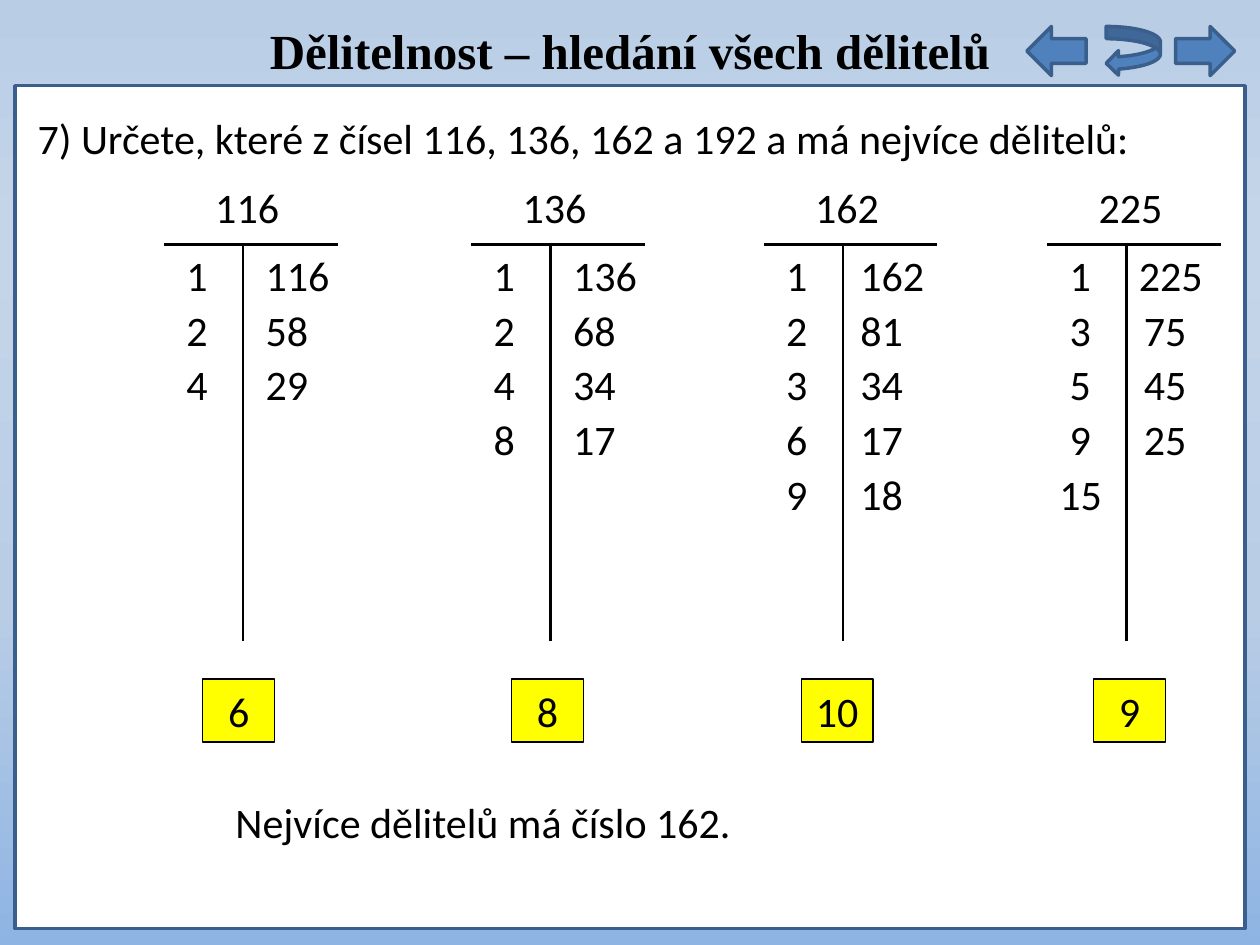
from lxml import etree
from pptx import Presentation
from pptx.dml.color import RGBColor
from pptx.enum.shapes import MSO_CONNECTOR, MSO_SHAPE as SHAPE
from pptx.enum.text import MSO_ANCHOR as ANCHOR, PP_ALIGN as ALIGN
from pptx.oxml.ns import qn
from pptx.util import Inches, Pt

# Content
TITLE = "Dělitelnost – hledání všech dělitelů"
QUESTION = "7) Určete, které z čísel 116, 136, 162 a 192 a má nejvíce dělitelů:"
ANSWER = "Nejvíce dělitelů má číslo 162."
# left edge, gap from stem to first and to later right-hand numbers, left of count box
COLUMNS = [
    dict(number="116", left=1.30, gaps=(0.08, 0.08), count="6", count_left=1.61,
         pairs=[("1", "116"), ("2", "58"), ("4", "29")]),
    dict(number="136", left=3.74, gaps=(0.08, 0.08), count="8", count_left=4.06,
         pairs=[("1", "136"), ("2", "68"), ("4", "34"), ("8", "17")]),
    dict(number="162", left=6.06, gaps=(0.04, 0.04), count="10", count_left=6.36,
         pairs=[("1", "162"), ("2", "81"), ("3", "34"), ("6", "17"), ("9", "18")]),
    dict(number="225", left=8.31, gaps=(0, 0.04), count="9", count_left=8.68,
         pairs=[("1", "225"), ("3", "75"), ("5", "45"), ("9", "25"), ("15", "")]),
]
ARROWS = [
    (SHAPE.RIGHT_ARROW, 9.33, 0.47),
    (SHAPE.LEFT_ARROW, 8.15, 0.47),
    (SHAPE.CURVED_LEFT_ARROW, 8.78, 0.43),
]
GRADIENT = [(0, "B9CDE5"), (25, "C5D5E9"), (64, "B9CDE5"), (100, "8EB4E3")]
BLACK, WHITE, YELLOW, BLUE, NAVY = "000000", "FFFFFF", "FFFF00", "4F81BD", "3A5F8C"

# Layout
TOP, BOTTOM, STEP = 1.94, 5.09, 0.435
TABLE_WIDTH, STEM = 1.38, 0.63
CELL_WIDTH, CELL_HEIGHT = 0.79, 0.5

deck = Presentation()
deck.slide_width, deck.slide_height = Inches(10), Inches(7.5)
page = deck.slides.add_slide(deck.slide_layouts[6])


def color(value):
    return RGBColor.from_string(value)


def write(box, text, size=24, font="Calibri", bold=False, align=ALIGN.LEFT,
          anchor=ANCHOR.TOP):
    frame = box.text_frame
    frame.word_wrap = True
    frame.vertical_anchor = anchor
    para = frame.paragraphs[0]
    para.alignment = align
    span = para.add_run()
    span.text = text
    span.font.size, span.font.name, span.font.bold = Pt(size), font, bold
    span.font.color.rgb = color(BLACK)


def add_text(text, left, top, width=CELL_WIDTH, height=CELL_HEIGHT, **style):
    box = page.shapes.add_textbox(*map(Inches, (left, top, width, height)))
    write(box, text, **style)


def add_shape(kind, left, top, width, height, fill, line, weight):
    shape = page.shapes.add_shape(kind, *map(Inches, (left, top, width, height)))
    shape.shadow.inherit = False
    shape.fill.solid()
    shape.fill.fore_color.rgb = color(fill)
    shape.line.color.rgb = color(line)
    shape.line.width = Pt(weight)
    return shape


def add_line(x1, y1, x2, y2):
    line = page.shapes.add_connector(
        MSO_CONNECTOR.STRAIGHT, *map(Inches, (x1, y1, x2, y2)))
    line.line.color.rgb = color(BLACK)
    line.line.width = Pt(1.5)
    etree.SubElement(line._element.spPr, qn("a:effectLst"))


# Background gradient, running from top to bottom
background = page.background.fill
background.gradient()
background.gradient_angle = 270
stops = page._element.find(".//" + qn("a:gsLst"))
for stop in list(stops):
    stops.remove(stop)
for percent, value in GRADIENT:
    stop = etree.SubElement(stops, qn("a:gs"), pos=str(percent * 1000))
    etree.SubElement(stop, qn("a:srgbClr"), val=value)

# Panel, title and question
add_shape(SHAPE.RECTANGLE, 0.12, 0.68, 9.76, 6.69, WHITE, NAVY, 2)
add_text(TITLE, 0.12, 0.11, 9.76, 0.57, size=28, font="Times New Roman",
         bold=True, align=ALIGN.CENTER)
add_text(QUESTION, 0.2, 0.84, 9.61, 4.96)

# Divisor tables with their counts
for column in COLUMNS:
    left = column["left"]
    stem = left + STEM
    add_line(left, TOP, left + TABLE_WIDTH, TOP)
    add_line(stem, TOP, stem, BOTTOM)
    add_text(column["number"], left + 0.31, 1.39)
    first_gap, later_gap = column["gaps"]
    for row, (divisor, quotient) in enumerate(column["pairs"]):
        top = TOP - 0.01 + row * STEP
        indent = 0.08 if len(divisor) == 1 else 0
        add_text(divisor, left + indent, top)
        if quotient:
            add_text(quotient, stem + (later_gap if row else first_gap), top)
    count_box = add_shape(SHAPE.RECTANGLE, column["count_left"], 5.39, 0.57, 0.5,
                          YELLOW, BLACK, 0.75)
    write(count_box, column["count"], align=ALIGN.CENTER)

# Answer and navigation arrows
add_text(ANSWER, 1.77, 6.27, 4.88)
for kind, left, width in ARROWS:
    add_shape(kind, left, 0.21, width, 0.39, BLUE, NAVY, 2)

deck.save("out.pptx")
